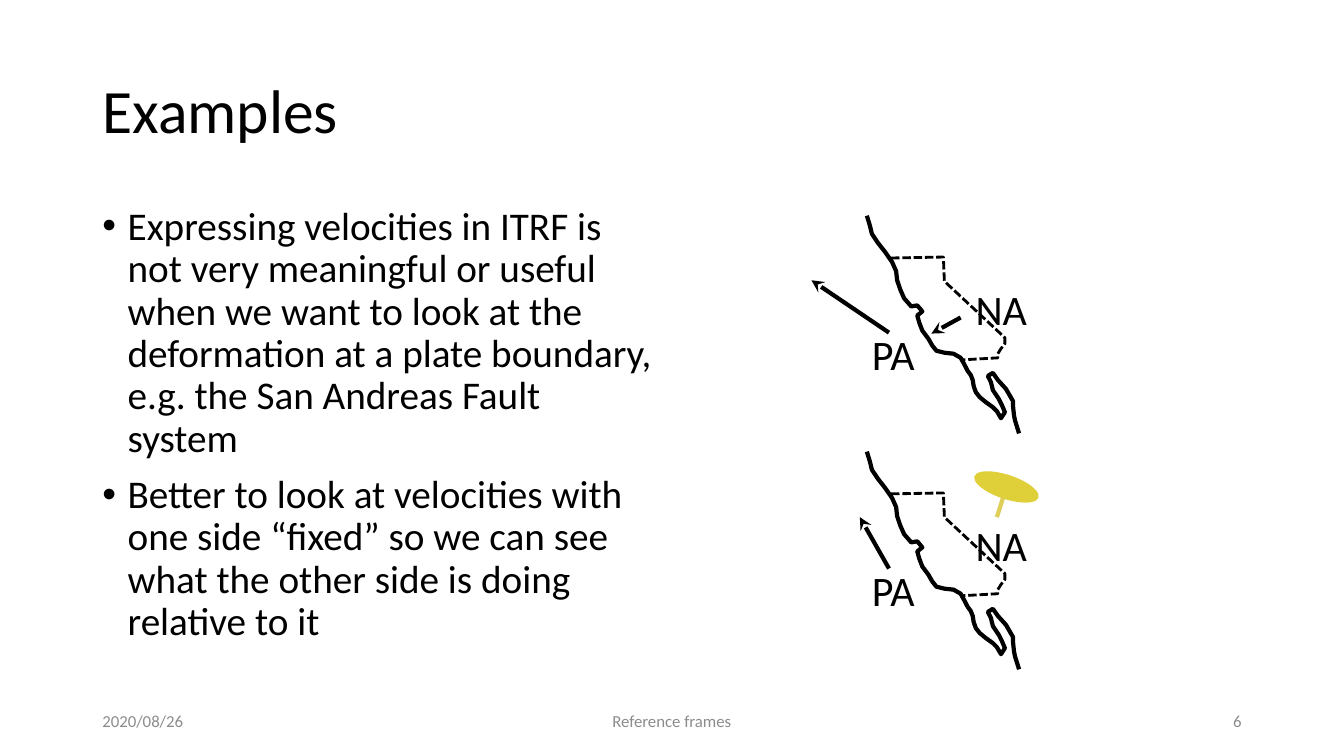
from lxml import etree
from pptx import Presentation
from pptx.dml.color import RGBColor
from pptx.enum import dml, shapes, text
from pptx.oxml import ns
from pptx.util import Pt

COLORS = {"ink": "000000", "gray": "8C8C8C", "pin": "DFD03A", "stem": "DFCF58"}
FONT = "Calibri"

# Map outlines, in points from the top left corner of a map
COAST = [
    (0, 0), (2.2, 7.2), (3.6, 13), (7.9, 19.4), (13, 25.9), (18, 33.1),
    (20.9, 39.6), (21.6, 46.1), (23.8, 52.6), (26.6, 59), (31.7, 64.8),
    (36, 64.1), (39.6, 68.4), (36, 71.3), (37.4, 76.3), (39.6, 82.1),
    (43.9, 87.8), (46.8, 92.9), (49.7, 96.5), (55.4, 97.9), (61.9, 98.6),
    (67, 101.5), (69.8, 106.6), (72, 110.9), (74.2, 113.8), (75.6, 117.4),
    (76.3, 121.7), (77.8, 126), (80.6, 129.6), (85, 133.2), (90, 136.8),
    (92.9, 139.7), (95.8, 144.7), (98.6, 140.4), (96.5, 135.4), (94.3, 131),
    (90, 124.6), (88.6, 118.8), (86.4, 114.5), (90, 112.3), (93.6, 117.4),
    (99.4, 123.8), (104.4, 132.5), (104.4, 136.1), (105.1, 142.6),
    (105.8, 146.2), (108.7, 155.5),
]
BORDER = [
    (17.3, 30.2), (54.7, 29.5), (55.4, 46.8), (98.6, 87.1), (98.6, 91.4),
    (95.8, 95), (93.6, 98.6), (93.6, 101.5), (67, 103),
]


def tint(name):
    return RGBColor.from_string(COLORS[name])


def write(frame, lines, size, color="ink", align="LEFT", anchor="MIDDLE",
          inset=None, wrap=True, spacing=None, before=0, indent=0):
    frame.word_wrap = wrap
    frame.auto_size = text.MSO_AUTO_SIZE.NONE
    frame.vertical_anchor = text.MSO_ANCHOR[anchor]
    if inset is not None:
        frame.margin_left = frame.margin_right = Pt(inset)
        frame.margin_top = frame.margin_bottom = Pt(inset)
    for i, line in enumerate(lines):
        para = frame.add_paragraph() if i else frame.paragraphs[0]
        para.alignment = text.PP_ALIGN[align]
        para.line_spacing = spacing
        para.space_before = Pt(before)
        if indent:
            props = para._p.get_or_add_pPr()
            props.set("marL", str(Pt(indent)))
            props.set("indent", str(-Pt(indent)))
        run = para.add_run()
        run.text = line
        run.font.name = FONT
        run.font.size = Pt(size)
        run.font.color.rgb = tint(color)


def place(shape, left, top, width, height):
    shape.left, shape.top = Pt(left), Pt(top)
    shape.width, shape.height = Pt(width), Pt(height)


def label(slide, box, words, size, **style):
    area = slide.shapes.add_textbox(*map(Pt, box))
    write(area.text_frame, [words], size, **style)


def trace(slide, left, top, points, width, dash=None):
    """Draw an open outline without fill."""
    spots = [(Pt(left + x), Pt(top + y)) for x, y in points]
    pen = slide.shapes.build_freeform(*spots[0], scale=1.0)
    pen.add_line_segments(spots[1:], close=False)
    shape = pen.convert_to_shape()
    shape.shadow.inherit = False
    shape.fill.background()
    shape.line.color.rgb = tint("ink")
    shape.line.width = Pt(width)
    shape.line.dash_style = dash


def stroke(slide, left, top, start, end, color="ink", arrow=True):
    link = slide.shapes.add_connector(
        shapes.MSO_CONNECTOR.STRAIGHT,
        Pt(left + start[0]), Pt(top + start[1]),
        Pt(left + end[0]), Pt(top + end[1]))
    link.line.color.rgb = tint(color)
    link.line.width = Pt(3)
    if arrow:
        tail = etree.SubElement(link.line._get_or_add_ln(), ns.qn("a:tailEnd"))
        tail.set("type", "stealth")
    etree.SubElement(link._element.spPr, ns.qn("a:effectLst"))


def draw_map(slide, left, top, arrows):
    trace(slide, left, top, COAST, 3)
    trace(slide, left, top, BORDER, 2, dml.MSO_LINE.SQUARE_DOT)
    for start, end in arrows:
        stroke(slide, left, top, start, end)
    for plate, x, y, width in (("PA", -0.7, 76.3, 38.9), ("NA", 73.4, 43.9, 45.4)):
        label(slide, (left + x, top + y, width, 44.6), plate, 30,
              inset=4.32, wrap=False)


def draw_pin(slide, left, top):
    head = slide.shapes.add_shape(
        shapes.MSO_SHAPE.OVAL, Pt(left), Pt(top), Pt(48.2), Pt(17.3))
    head.rotation = 18.4
    head.shadow.inherit = False
    head.fill.solid()
    head.fill.fore_color.rgb = tint("pin")
    head.line.fill.background()
    stroke(slide, left, top, (21.6, 16.5), (17.3, 30.2), "stem", arrow=False)


def fill_text(slide):
    title, body = slide.placeholders
    place(title, 66, 28.8, 828, 104.4)
    write(title.text_frame, ["Examples"], 44, spacing=0.9)
    place(body, 66, 144, 408.2, 342.7)
    write(body.text_frame, [
        "Expressing velocities in ITRF is not very meaningful or useful when "
        "we want to look at the deformation at a plate boundary, e.g. the "
        "San Andreas Fault system",
        "Better to look at velocities with one side “fixed” so we can see "
        "what the other side is doing relative to it",
    ], 28, anchor="TOP", spacing=0.9, before=10, indent=18)


def add_footer(slide, top):
    for words, left, width, align in (
            ("2020/08/26", 66, 216, "LEFT"),
            ("Reference frames", 318, 324, "CENTER"),
            ("6", 678, 216, "RIGHT")):
        label(slide, (left, top, width, 28.8), words, 12,
              color="gray", align=align)


def main():
    deck = Presentation()
    deck.slide_width, deck.slide_height = Pt(960), Pt(540)
    slide = deck.slides.add_slide(deck.slide_layouts[1])
    fill_text(slide)
    add_footer(slide, 500.4)
    left, upper, lower = 619.2, 154.1, 322.6
    origin = (15.8, 83.5)
    draw_map(slide, left, upper,
             [(origin, (-39.6, 46.1)), ((67, 72.7), (46.1, 84.2))])
    draw_map(slide, left, lower, [(origin, (-5, 46.8))])
    draw_pin(slide, left + 75.6, lower + 16.6)
    deck.save("out.pptx")


if __name__ == "__main__":
    main()
